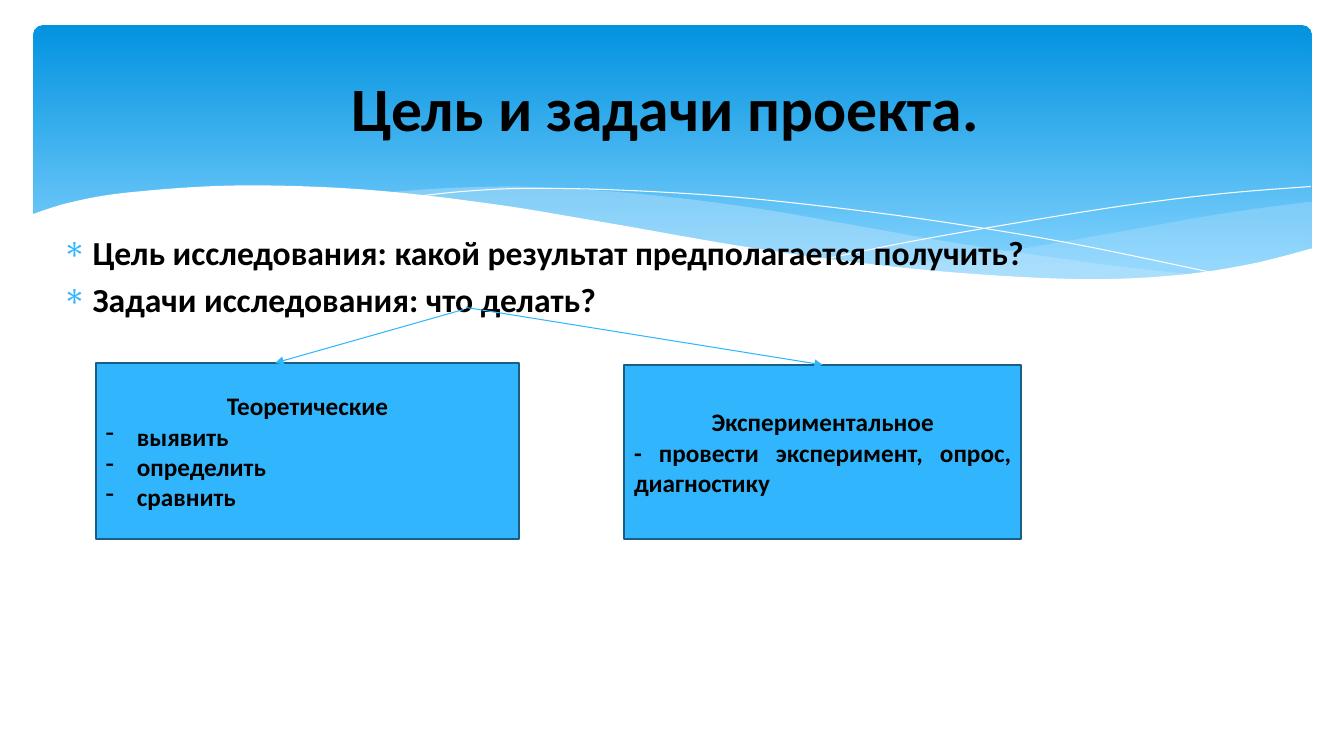
from lxml.etree import SubElement
from pptx import Presentation
from pptx.dml.color import RGBColor
from pptx.enum.shapes import MSO_CONNECTOR, MSO_SHAPE
from pptx.enum.text import MSO_ANCHOR, PP_ALIGN
from pptx.oxml.ns import qn
from pptx.util import Inches, Pt

THEME = {
    "font": "Calibri",
    "ink": RGBColor.from_string("000000"),
    "white": RGBColor.from_string("FFFFFF"),
    "accent": RGBColor.from_string("31B6FD"),
    "border": RGBColor.from_string("195F84"),
    "mist": RGBColor.from_string("C6E7FC"),
    "sky": [(0, RGBColor.from_string("0293E0")), (0.9, RGBColor.from_string("83D3FE"))],
    "title": Pt(44),
    "body": Pt(24),
    "label": Pt(18),
}

deck = Presentation()
deck.slide_width, deck.slide_height = Inches(13.33), Inches(7.5)
COLUMN = deck.slide_width / 1333
ROW = deck.slide_height / 750
page = deck.slides.add_slide(deck.slide_layouts[5])


def smooth(knots, steps=6):
    padded = [knots[0], *knots, knots[-1]]
    points = [knots[0]]
    for a, b, c, d in zip(padded, padded[1:], padded[2:], padded[3:]):
        for step in range(1, steps + 1):
            t = step / steps
            points.append(tuple(
                (2 * q + (r - p) * t + (2 * p - 5 * q + 4 * r - s) * t**2
                 + (3 * q - p - 3 * r + s) * t**3) / 2
                for p, q, r, s in zip(a, b, c, d)))
    return points


def write(frame, lines, size, anchor):
    for name, value in {"word_wrap": True, "vertical_anchor": anchor}.items():
        setattr(frame, name, value)
    for index, (text, align, bullet, indent, space) in enumerate(lines):
        para = frame.paragraphs[0] if index == 0 else frame.add_paragraph()
        for name, value in {"alignment": align, "space_before": Pt(space)}.items():
            setattr(para, name, value)
        span = para.add_run()
        span.text = text
        for name, value in {"name": THEME["font"], "size": size, "bold": True}.items():
            setattr(span.font, name, value)
        span.font.color.rgb = THEME["ink"]
        if bullet:
            settings = para._p.get_or_add_pPr()
            settings.set("marL", str(int(indent * COLUMN)))
            settings.set("indent", str(int(-indent * COLUMN)))
            if bullet == "∗":
                color = SubElement(settings, qn("a:buClr"))
                SubElement(color, qn("a:srgbClr"), val=str(THEME["accent"]))
            SubElement(settings, qn("a:buChar"), char=bullet)


banner = page.shapes.add_shape(
    MSO_SHAPE.ROUNDED_RECTANGLE, int(33 * COLUMN), int(25 * ROW), int(1268 * COLUMN), int(270 * ROW))
banner.adjustments[0] = 0.034
banner.shadow.inherit = False
banner.line.fill.background()
banner.fill.gradient()
banner.fill.gradient_angle = 270
for stop, (position, color) in zip(banner.fill.gradient_stops, THEME["sky"]):
    stop.position = position
    stop.color.rgb = color

right_wave = [
    [(1301, 200), (1246, 207), (1188, 216), (1110, 230), (1005, 248), (882, 265)],
    [(882, 265), (940, 271), (1009, 276), (1071, 278), (1126, 277), (1174, 273), (1228, 265), (1301, 247)],
]
middle_wave = [
    [(1190, 273), (1116, 265), (1034, 254), (941, 240), (839, 222), (759, 208), (686, 198),
     (619, 191), (560, 187), (506, 185), (437, 187), (382, 191)],
    [(382, 191), (456, 199), (539, 211), (599, 222), (706, 240), (802, 255), (887, 266),
     (963, 274), (1030, 277), (1090, 278), (1143, 277), (1190, 273)],
]
falling_line = [[(412, 195), (458, 190), (516, 187), (600, 188), (710, 194), (811, 204),
                 (927, 219), (1060, 241), (1210, 272)]]
rising_line = [[(818, 257), (896, 241), (997, 223), (1115, 204), (1213, 192), (1300, 185)]]
white_wave = [
    [(31, 213), (69, 201), (127, 191), (235, 184), (361, 188), (486, 202), (596, 220), (740, 245),
     (863, 262), (969, 272), (1078, 277), (1167, 273), (1240, 262), (1303, 246)],
    [(1303, 329)],
    [(31, 329)],
]
for edges, color, opacity in [
    (right_wave, THEME["mist"], 29),
    (middle_wave, THEME["mist"], 40),
    (falling_line, None, 0),
    (rising_line, None, 0),
    (white_wave, THEME["white"], 100),
]:
    points = [(x * COLUMN, y * ROW) for edge in edges for x, y in smooth(edge)]
    builder = page.shapes.build_freeform(*points[0])
    builder.add_line_segments(points[1:], close=color is not None)
    wave = builder.convert_to_shape()
    wave.shadow.inherit = False
    if color is None:
        wave.fill.background()
        wave.line.color.rgb = THEME["white"]
        wave.line.width = Pt(0)
        continue
    wave.line.fill.background()
    wave.fill.solid()
    wave.fill.fore_color.rgb = color
    if opacity < 100:
        tint = wave.element.spPr.find(qn("a:solidFill"))[0]
        SubElement(tint, qn("a:alpha"), val=str(opacity * 1000))

goals = page.shapes.add_textbox(int(52 * COLUMN), int(225 * ROW), int(1047 * COLUMN), int(459 * ROW))
write(goals.text_frame, [
    ("Цель исследования: какой результат предполагается получить?", PP_ALIGN.LEFT, "∗", 30, 4.8),
    ("Задачи исследования: что делать?", PP_ALIGN.LEFT, "∗", 30, 4.8),
], THEME["body"], MSO_ANCHOR.TOP)

title = page.shapes.title
for name, value in {"left": 67 * COLUMN, "top": 37 * ROW, "width": 1200 * COLUMN, "height": 137 * ROW}.items():
    setattr(title, name, int(value))
write(title.text_frame, [("Цель и задачи проекта. ", PP_ALIGN.CENTER, None, 0, 0)],
      THEME["title"], MSO_ANCHOR.MIDDLE)
goals.element.addnext(title.element)

theory = [("Теоретические", PP_ALIGN.CENTER, None, 0, 0)]
theory += [(task, PP_ALIGN.JUSTIFY, "-", 31, 0) for task in ("выявить", "определить", "сравнить")]
practice = [
    ("Экспериментальное", PP_ALIGN.CENTER, None, 0, 0),
    ("- провести эксперимент, опрос, диагностику", PP_ALIGN.JUSTIFY, None, 0, 0),
]
for left, top, width, height, lines in [(95, 360, 420, 175, theory), (619, 362, 394, 173, practice)]:
    box = page.shapes.add_shape(
        MSO_SHAPE.RECTANGLE, int(left * COLUMN), int(top * ROW), int(width * COLUMN), int(height * ROW))
    box.shadow.inherit = False
    box.fill.solid()
    box.fill.fore_color.rgb = THEME["accent"]
    box.line.color.rgb = THEME["border"]
    box.line.width = Pt(1.25)
    write(box.text_frame, lines, THEME["label"], MSO_ANCHOR.MIDDLE)

for start_x, start_y, end_x, end_y in [(460, 307, 273, 360), (462, 305, 816, 362)]:
    arrow = page.shapes.add_connector(
        MSO_CONNECTOR.STRAIGHT, int(start_x * COLUMN), int(start_y * ROW), int(end_x * COLUMN), int(end_y * ROW))
    arrow.line.color.rgb = THEME["accent"]
    arrow.line.width = Pt(0.75)
    SubElement(arrow.line._get_or_add_ln(), qn("a:tailEnd"), type="triangle")
    SubElement(arrow.element.spPr, qn("a:effectLst"))

deck.save("out.pptx")
